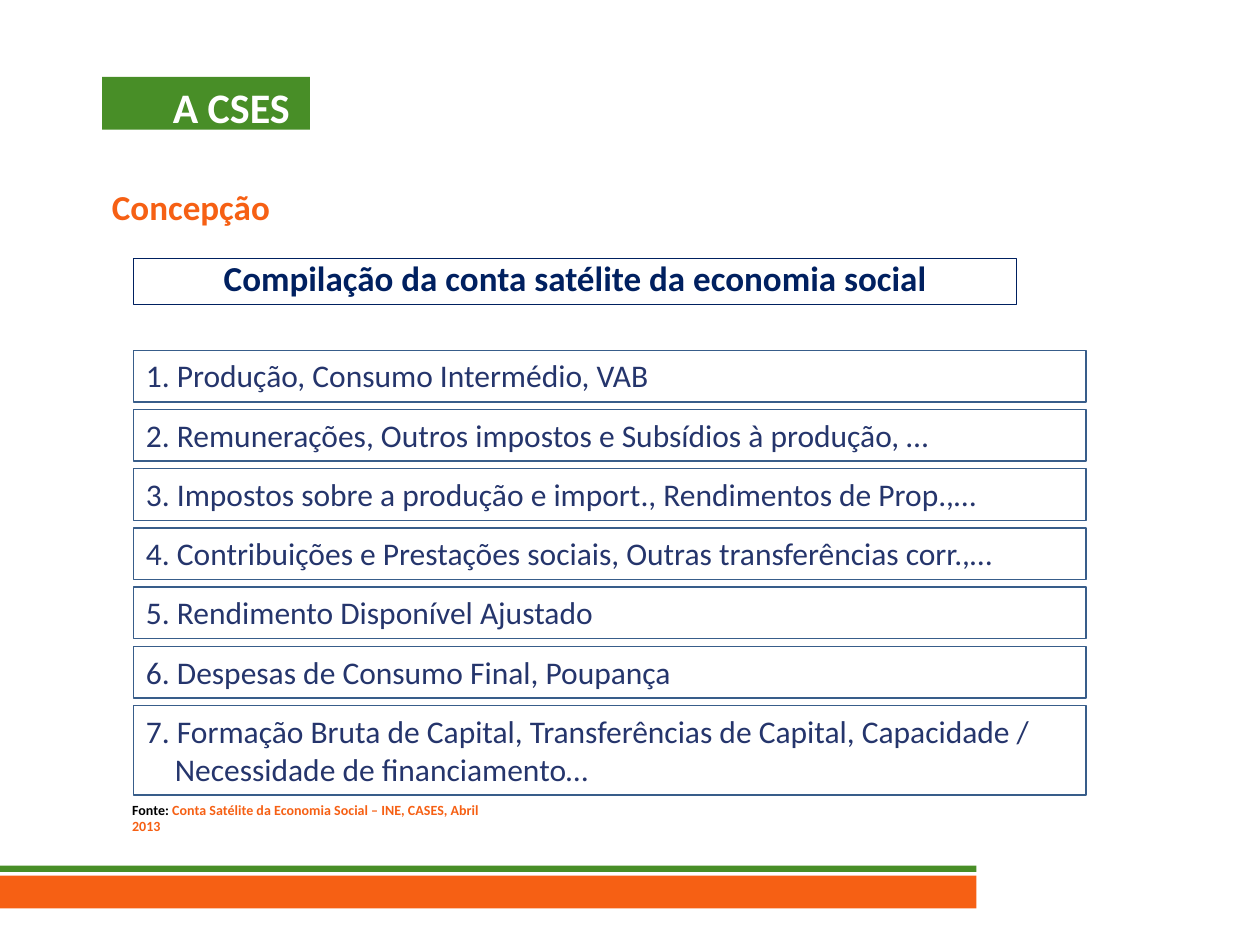
"""Build the slide on how the social economy satellite account is compiled."""
import pptx
import pptx.dml.color
import pptx.enum.shapes
import pptx.enum.text
import pptx.util

Inches = pptx.util.Inches
ALIGN = pptx.enum.text.PP_ALIGN
ANCHOR = pptx.enum.text.MSO_ANCHOR

COLORS = {
    "orange": "F66014",
    "green": "488E27",
    "white": "FFFFFF",
    "navy": "002060",
    "item": "25356C",
    "border": "385D8A",
    "black": "000000",
}
FONT = "Calibri"

SECTION = "A CSES"
HEADING = "Concepção"
TITLE = "Compilação da conta satélite da economia social"
ITEMS = [
    ["1. Produção, Consumo Intermédio, VAB"],
    ["2. Remunerações, Outros impostos e Subsídios à produção, …"],
    ["3. Impostos sobre a produção e import., Rendimentos de Prop.,…"],
    ["4. Contribuições e Prestações sociais, Outras transferências corr.,…"],
    ["5. Rendimento Disponível Ajustado"],
    ["6. Despesas de Consumo Final, Poupança"],
    ["7. Formação Bruta de Capital, Transferências de Capital, Capacidade /",
     "Necessidade de financiamento…"],
]
SOURCE = [
    ("Fonte: ", "black"),
    ("Conta Satélite da Economia Social – INE, CASES, Abril 2013", "orange"),
]
FOOTER_BARS = [(6.95, 0.26, "orange"), (6.87, 0.05, "green")]

ITEM_LEFT, ITEM_TOP, ITEM_WIDTH = 1.06, 2.78, 7.56
ITEM_PITCH, ITEM_HEIGHT, EXTRA_LINE = 0.47, 0.41, 0.3
HANGING = 0.23


def rgb(name):
    return pptx.dml.color.RGBColor.from_string(COLORS[name])


def add_box(slide, left, top, width, height, fill=None, line=None):
    shape = slide.shapes.add_shape(
        pptx.enum.shapes.MSO_SHAPE.RECTANGLE,
        Inches(left), Inches(top), Inches(width), Inches(height))
    shape.shadow.inherit = False
    if fill:
        shape.fill.solid()
        shape.fill.fore_color.rgb = rgb(fill)
    else:
        shape.fill.background()
    if line:
        shape.line.color.rgb = rgb(line)
        shape.line.width = pptx.util.Pt(0.75)
    else:
        shape.line.fill.background()
    return shape


def add_text_box(slide, left, top, width, height):
    return slide.shapes.add_textbox(
        Inches(left), Inches(top), Inches(width), Inches(height))


def write(shape, paragraphs, size, bold=False, align=ALIGN.LEFT, anchor=ANCHOR.TOP):
    frame = shape.text_frame
    frame.word_wrap = True
    frame.vertical_anchor = anchor
    for number, runs in enumerate(paragraphs):
        paragraph = frame.add_paragraph() if number else frame.paragraphs[0]
        paragraph.alignment = align
        for text, color in runs:
            run = paragraph.add_run()
            run.text = text
            run.font.name = FONT
            run.font.size = pptx.util.Pt(size)
            run.font.bold = bold
            run.font.color.rgb = rgb(color)
    return frame


def add_item(slide, top, lines):
    height = ITEM_HEIGHT + EXTRA_LINE * (len(lines) - 1)
    box = add_box(slide, ITEM_LEFT, top, ITEM_WIDTH, height, line="border")
    frame = write(box, [[(line, "item")] for line in lines], 18)
    for number, paragraph in enumerate(frame.paragraphs):
        properties = paragraph._p.get_or_add_pPr()
        properties.set("marL", str(Inches(HANGING)))
        properties.set("indent", str(0 if number else -Inches(HANGING)))


def main():
    presentation = pptx.Presentation()
    presentation.slide_width = Inches(10)
    presentation.slide_height = Inches(7.5)
    slide = presentation.slides.add_slide(presentation.slide_layouts[6])

    for top, height, color in FOOTER_BARS:
        add_box(slide, 0, top, 7.75, height, fill=color)

    section = add_box(slide, 0.81, 0.61, 1.65, 0.42, fill="green")
    frame = write(section, [[(SECTION, "white")]], 24, True, ALIGN.RIGHT, ANCHOR.MIDDLE)
    frame.margin_left = frame.margin_bottom = 0
    frame.margin_top = Inches(0.06)
    frame.margin_right = Inches(0.16)

    heading = add_text_box(slide, 0.79, 1.17, 3.49, 0.93)
    write(heading, [[(HEADING, "orange")]], 20, True, anchor=ANCHOR.MIDDLE)

    title = add_box(slide, ITEM_LEFT, 2.05, 7.01, 0.37, line="navy")
    frame = write(title, [[(TITLE, "navy")]], 20, True, ALIGN.CENTER)
    frame.paragraphs[0].line_spacing = 0.8

    for index, lines in enumerate(ITEMS):
        add_item(slide, ITEM_TOP + index * ITEM_PITCH, lines)

    write(add_text_box(slide, 0.95, 6.31, 3.19, 0.67), [SOURCE], 8, True)
    presentation.save("out.pptx")


if __name__ == "__main__":
    main()
